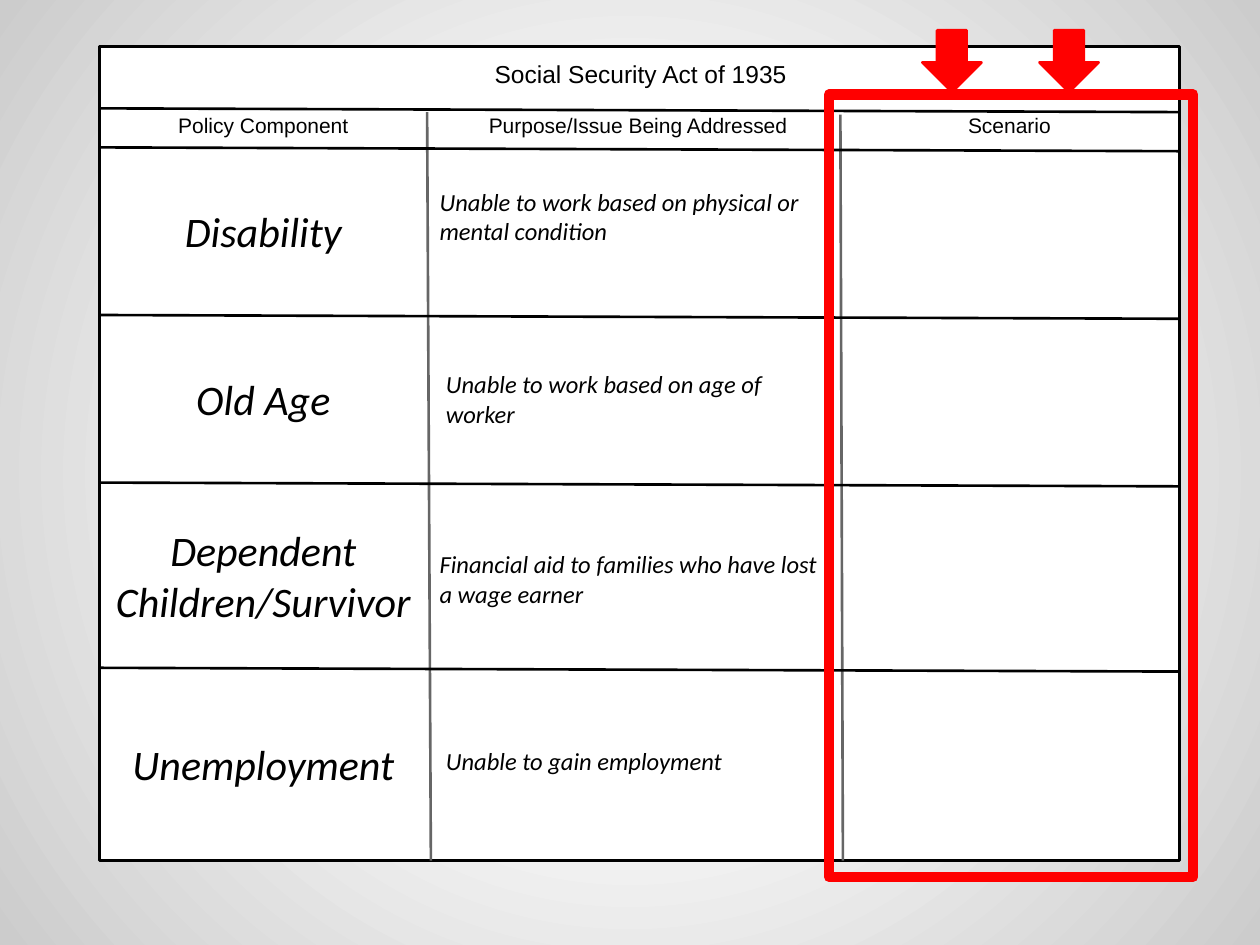
from lxml import etree
from pptx import Presentation, oxml
from pptx.dml.color import RGBColor
from pptx.enum import shapes, text
from pptx.oxml.ns import nsdecls, qn
from pptx.util import Inches, Pt

COLORS = {"ink": "000000", "paper": "FFFFFF", "divider": "666666",
          "accent": "FF0000", "edge": "CCCCCC"}
HEADING = {"name": "Arial", "size": Pt(12), "italic": False, "bold": False}
TITLE = {**HEADING, "size": Pt(14)}
COMPONENT = {"name": "Calibri", "size": Pt(24), "italic": True}
PURPOSE = {**COMPONENT, "size": Pt(14)}
CENTER, LEFT = text.PP_ALIGN.CENTER, text.PP_ALIGN.LEFT
TOP, MIDDLE = text.MSO_ANCHOR.TOP, text.MSO_ANCHOR.MIDDLE


def rgb(name):
    return RGBColor.from_string(COLORS[name])


class SlideBuilder:
    """Holds the shared style and the slide being drawn."""

    def __init__(self, prs):
        self.slide = prs.slides.add_slide(prs.slide_layouts[5])
        self.items = self.slide.shapes
        self.inset = Inches(0.1)

    def background(self):
        """Fill the slide with a circular gradient, light at the centre."""
        self.slide.background.fill.gradient()
        grad = self.slide.element.find(".//" + qn("a:gradFill"))
        stops = "".join(
            f'<a:gs pos="{pos}"><a:srgbClr val="{COLORS[name]}"/></a:gs>'
            for pos, name in ((0, "paper"), (30000, "paper"), (100000, "edge")))
        grad.getparent().replace(grad, oxml.parse_xml(
            f'<a:gradFill {nsdecls("a")} rotWithShape="1"><a:gsLst>{stops}</a:gsLst>'
            '<a:path path="circle"><a:fillToRect l="50000" t="50000" r="50000" b="50000"/>'
            '</a:path></a:gradFill>'))

    def shape(self, kind, box, line, fill=None, width=1.5):
        sp = self.items.add_shape(kind, *map(Inches, box))
        sp.shadow.inherit = False
        if fill:
            sp.fill.solid()
            sp.fill.fore_color.rgb = rgb(fill)
        else:
            sp.fill.background()
        sp.line.color.rgb = rgb(line)
        sp.line.width = Pt(width)
        etree.SubElement(sp.element.spPr.find(qn("a:ln")), qn("a:round"))

    def line(self, start, end, color):
        cx = self.items.add_connector(
            shapes.MSO_CONNECTOR.STRAIGHT, *map(Inches, start + end))
        cx.line.color.rgb = rgb(color)
        cx.line.width = Pt(1.5)
        etree.SubElement(cx.element.spPr, qn("a:effectLst"))

    def format_text(self, sp, words, font, align, anchor, before=0, bottom=0.1):
        tf = sp.text_frame
        frame = {"word_wrap": True, "auto_size": text.MSO_AUTO_SIZE.NONE,
                 "vertical_anchor": anchor, "margin_left": self.inset,
                 "margin_right": self.inset, "margin_top": self.inset,
                 "margin_bottom": Inches(bottom)}
        for key, value in frame.items():
            setattr(tf, key, value)
        p = tf.paragraphs[0]
        p.alignment, p.space_before = align, Pt(before)
        r = p.add_run()
        r.text = words
        for key, value in font.items():
            setattr(r.font, key, value)
        r.font.color.rgb = rgb("ink")

    def title(self, words, box):
        sp = self.items.title
        self.items.element.append(sp.element)  # bring in front of the panel
        sp.left, sp.top, sp.width, sp.height = map(Inches, box)
        self.format_text(sp, words, TITLE, CENTER, TOP)

    def label(self, words, box, font, align=CENTER, **spacing):
        sp = self.items.add_textbox(*map(Inches, box))
        self.format_text(sp, words, font, align, MIDDLE, **spacing)


def main():
    prs = Presentation()
    prs.slide_width, prs.slide_height = Inches(10), Inches(7.5)
    s = SlideBuilder(prs)
    s.background()

    left, right, bottom = 0.79, 9.37, 6.83
    s.shape(shapes.MSO_SHAPE.RECTANGLE, (left, 0.37, 8.57, 6.46), "ink", "paper")
    for x, top, drift in ((3.39, 0.89, 0.03), (6.67, 0.91, 0.02)):
        s.line((x, top), (x + drift, bottom), "divider")
    row_tops = (1.17, 2.5, 3.83, 5.3)
    for y in (0.86, *row_tops):
        s.line((left, y), (right, y + 0.03), "ink")

    s.title("Social Security Act of 1935", (0.8, 0.37, 8.57, 0.49))
    for words, x, width in (("Policy Component", left, 2.6),
                            ("Purpose/Issue Being Addressed", 3.62, 2.89),
                            ("Scenario ", 6.67, 2.73)):
        s.label(words, (x, 0.57, width, 0.85), HEADING)

    # component, purpose, purpose left, purpose height, purpose spacing
    rows = (
        ("Disability", "Unable to work based on physical or mental condition",
         3.39, 1.33, {"before": 6.4, "bottom": 0.34}),
        ("Old Age", "Unable to work based on age of worker", 3.44, 1.33, {}),
        ("Dependent Children/Survivor",
         "Financial aid to families who have lost a wage earner",
         3.39, 1.53, {"before": 6.4}),
        ("Unemployment", "Unable to gain employment", 3.44, 1.47, {"before": 6.4}),
    )
    for top, end, row in zip(row_tops, (*row_tops[1:], bottom), rows):
        component, purpose, x, height, spacing = row
        s.label(component, (left, top, 2.6, end - top), COMPONENT)
        s.label(purpose, (x, top, 3.28, height), PURPOSE, LEFT, **spacing)

    s.shape(shapes.MSO_SHAPE.RECTANGLE, (6.58, 0.75, 2.89, 6.21), "accent", width=6)
    for x in (7.32, 8.25):
        s.shape(shapes.MSO_SHAPE.DOWN_ARROW, (x, 0.24, 0.47, 0.49), "accent", "accent")

    prs.save("out.pptx")


if __name__ == "__main__":
    main()
